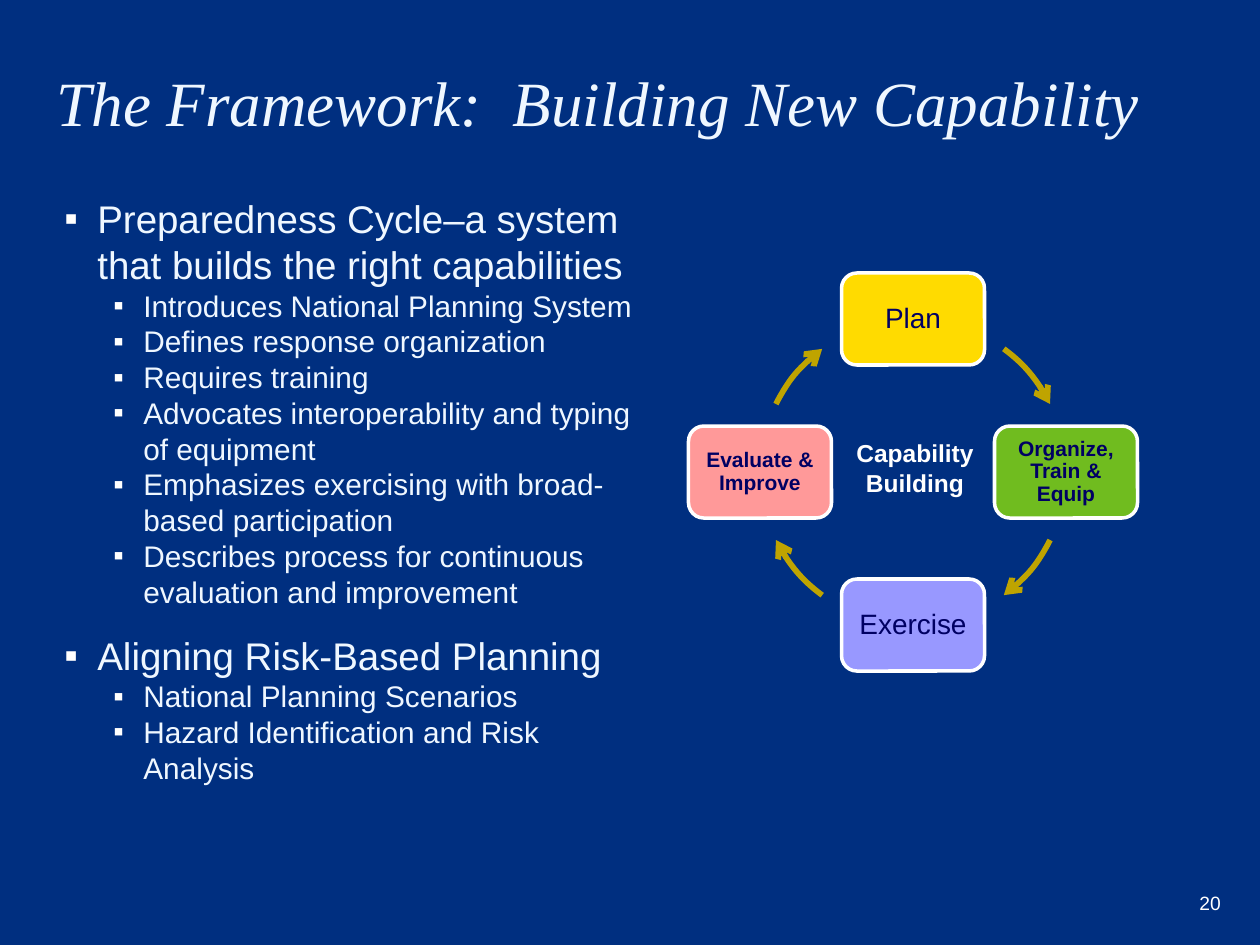
from lxml import etree
from pptx import Presentation
from pptx import util as u
from pptx.dml.color import RGBColor
from pptx.enum import shapes, text
from pptx.oxml import ns

PX = u.Inches(1) / 126
COLORS = {
    "navy": "002F80", "white": "FFFFFF", "ice": "EFF7FF", "ink": "000063",
    "gold": "BFA400", "yellow": "FFDB00", "green": "70BC1F",
    "violet": "9898FF", "pink": "FF9999",
}


def px(*values):
    return [round(value * PX) for value in values]


def write(para, wording, size, color, **formats):
    span = para.add_run()
    span.text = wording
    settings = {"name": "Arial", "size": u.Pt(size), **formats}
    for key, value in settings.items():
        setattr(span.font, key, value)
    span.font.color.rgb = RGBColor.from_string(COLORS[color])


deck = Presentation()
deck.slide_width, deck.slide_height = px(1260, 945)
page = deck.slides.add_slide(deck.slide_layouts[5])
page.background.fill.solid()
page.background.fill.fore_color.rgb = RGBColor.from_string(COLORS["navy"])

title = page.shapes.title
title.left, title.top, title.width, title.height = px(44, 0, 1184, 145)
frame = title.text_frame
frame.auto_size = text.MSO_AUTO_SIZE.NONE
frame.vertical_anchor = text.MSO_ANCHOR.BOTTOM
frame.paragraphs[0].alignment = text.PP_ALIGN.LEFT
write(frame.paragraphs[0], "The Framework:  Building New Capability", 36, "ice",
      name="Times New Roman", italic=True)

outline = [
    (0, "Preparedness Cycle–a system that builds the right capabilities"),
    (1, "Introduces National Planning System"),
    (1, "Defines response organization"),
    (1, "Requires training"),
    (1, "Advocates interoperability and typing of equipment"),
    (1, "Emphasizes exercising with broad-based participation"),
    (1, "Describes process for continuous evaluation and improvement"),
    (0, "Aligning Risk-Based Planning"),
    (1, "National Planning Scenarios"),
    (1, "Hazard Identification and Risk Analysis"),
]
levels = [
    {"size": 22, "margin": 33, "hang": 33, "before": 13},
    {"size": 17, "margin": 79, "hang": 30, "before": 0},
]
body = page.shapes.add_textbox(*px(52, 189, 599, 630))
frame = body.text_frame
frame.word_wrap = True
for index, (level, wording) in enumerate(outline):
    style = levels[level]
    para = frame.add_paragraph() if index else frame.paragraphs[0]
    para.level = level
    margin, hang = px(style["margin"], style["hang"])
    props = para._p.get_or_add_pPr()
    props.set("marL", str(margin))
    props.set("indent", str(-hang))
    bullet_color = etree.SubElement(props, ns.qn("a:buClr"))
    etree.SubElement(bullet_color, ns.qn("a:srgbClr"), val=COLORS["white"])
    etree.SubElement(props, ns.qn("a:buFont"), typeface="Arial")
    etree.SubElement(props, ns.qn("a:buChar"), char="▪")
    para.space_before = u.Pt(style["before"] if index else 0)
    write(para, wording, style["size"], "ice")

center_x, center_y, radius = 913, 472, 153
box_width, box_height = 143, 92
steps = [
    ("Plan", "yellow", 0, -1, 16, 9, 306.4),
    ("Organize, Train & Equip", "green", 1, 0, 12, 6, 26.4),
    ("Exercise", "violet", 0, 1, 16, 9, 126.4),
    ("Evaluate & Improve", "pink", -1, 0, 12, 6, 206.4),
]
for wording, fill, across, down, size, inset, start in steps:
    box = page.shapes.add_shape(
        shapes.MSO_SHAPE.ROUNDED_RECTANGLE,
        *px(center_x + across * radius - box_width / 2,
            center_y + down * radius - box_height / 2, box_width, box_height))
    box.shadow.inherit = False
    box.fill.solid()
    box.fill.fore_color.rgb = RGBColor.from_string(COLORS[fill])
    box.line.color.rgb = RGBColor.from_string(COLORS["white"])
    box.line.width = u.Pt(2)
    frame = box.text_frame
    frame.word_wrap = True
    frame.vertical_anchor = text.MSO_ANCHOR.MIDDLE
    for side in ("left", "top", "right", "bottom"):
        setattr(frame, f"margin_{side}", px(inset)[0])
    para = frame.paragraphs[0]
    para.alignment = text.PP_ALIGN.CENTER
    para.line_spacing = 0.9
    write(para, wording, size, "ink", bold=size == 12)

    arc = page.shapes.add_shape(
        shapes.MSO_SHAPE.ARC,
        *px(center_x - radius, center_y - radius, 2 * radius, 2 * radius))
    arc.shadow.inherit = False
    arc.adjustments[0] = start * 0.6
    arc.adjustments[1] = (start + 27.2) * 0.6
    arc.fill.background()
    arc.line.color.rgb = RGBColor.from_string(COLORS["gold"])
    arc.line.width = u.Pt(3.25)
    line = arc._element.spPr.find(ns.qn("a:ln"))
    etree.SubElement(line, ns.qn("a:tailEnd"), type="arrow")

hub = page.shapes.add_textbox(*px(831, 432, 168, 72))
hub.text_frame.word_wrap = True
para = hub.text_frame.paragraphs[0]
para.alignment = text.PP_ALIGN.CENTER
write(para, "Capability Building", 14, "white", bold=True)

number = page.shapes.add_textbox(*px(1187, 886, 63, 35))
number.text_frame.word_wrap = True
number.text_frame.vertical_anchor = text.MSO_ANCHOR.BOTTOM
write(number.text_frame.paragraphs[0], "20", 11, "white")

deck.save("out.pptx")
